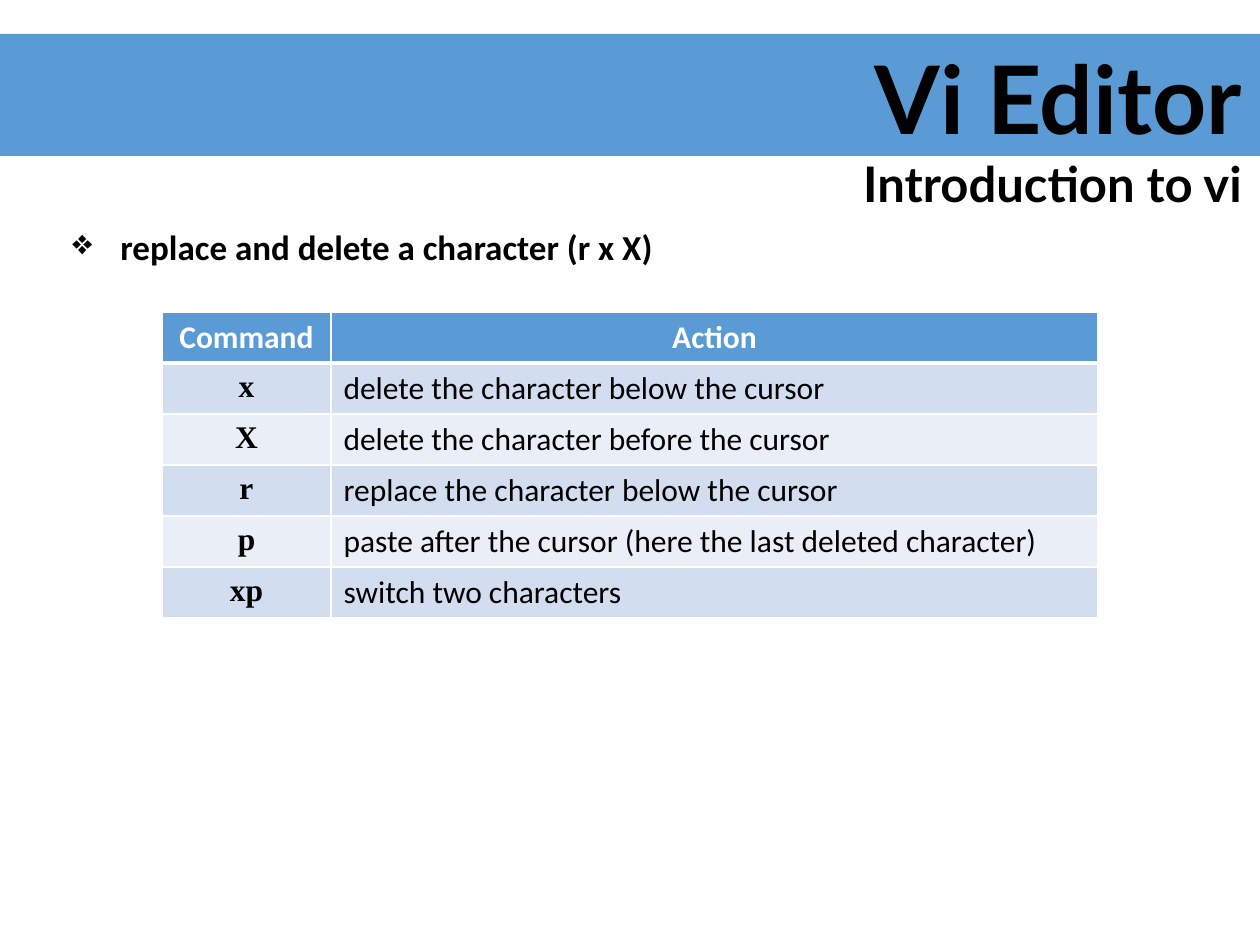
from lxml.etree import SubElement
from pptx import Presentation
from pptx.dml.color import RGBColor
from pptx.enum.shapes import MSO_SHAPE as Shape
from pptx.enum.text import MSO_AUTO_SIZE as AutoSize, PP_ALIGN as Align
from pptx.oxml.ns import qn
from pptx.util import Pt

PX = 914400 / 126
BLUE, PALE, PALER = "5B9BD5", "D2DEEF", "EAEFF7"
BLACK, WHITE = "000000", "FFFFFF"
HEADING = {"name": "Lato", "bold": True}
TOPIC = {"name": "Calibri", "bold": True, "size": Pt(20)}
HEADER = {"name": "Calibri", "bold": True, "size": Pt(18)}
COMMAND = {**HEADER, "name": "Times New Roman"}
ACTION = {**HEADER, "bold": False}
COMMANDS = [
    ("x", "delete the character below the cursor"),
    ("X", "delete the character before the cursor"),
    ("r", "replace the character below the cursor"),
    ("p", "paste after the cursor (here the last deleted character)"),
    ("xp", "switch two characters"),
]


def px(*lengths):
    return [round(length * PX) for length in lengths]


def paint(fill, color):
    fill.solid()
    fill.fore_color.rgb = RGBColor.from_string(color)


def write(paragraph, words, font, color=BLACK, align=Align.LEFT):
    paragraph.alignment = align
    run = paragraph.add_run()
    run.text = words
    for key, value in font.items():
        setattr(run.font, key, value)
    paint(run.font.fill, color)


def add_frame(slide, left, top, width, height):
    frame = slide.shapes.add_textbox(*px(left, top, width, height)).text_frame
    frame.word_wrap = True
    frame.auto_size = AutoSize.SHAPE_TO_FIT_TEXT
    return frame


def add_banner(slide, left, top, width, height):
    band = slide.shapes.add_shape(Shape.RECTANGLE, *px(left, top, width, height))
    band.shadow.inherit = False
    paint(band.fill, BLUE)
    band.line.fill.background()
    titles = add_frame(slide, left + 24, top, width - 30, height + 64)
    write(titles.paragraphs[0], "Vi Editor", {**HEADING, "size": Pt(54)}, align=Align.RIGHT)
    write(titles.add_paragraph(), "Introduction to vi", {**HEADING, "size": Pt(28)}, align=Align.RIGHT)


def add_topic(slide, left, top, width, height):
    topic = add_frame(slide, left, top, width, height).paragraphs[0]
    write(topic, "replace and delete a character (r x X)", TOPIC)
    indent, = px(48)
    properties = topic._p.get_or_add_pPr()
    properties.set("marL", str(indent))
    properties.set("indent", str(-indent))
    SubElement(properties, qn("a:buChar"), char="❖")


def add_borders(cell, bottom):
    properties = cell._tc.get_or_add_tcPr()
    for index, (side, weight) in enumerate([("L", 1), ("R", 1), ("T", 1), ("B", bottom)]):
        border = SubElement(properties, qn(f"a:ln{side}"), w=str(Pt(weight)))
        fill = SubElement(border, qn("a:solidFill"))
        SubElement(fill, qn("a:srgbClr"), val=WHITE)
        properties.insert(index, border)


def add_commands(slide, left, top, width, height):
    rows = [("Command", "Action"), *COMMANDS]
    table = slide.shapes.add_table(len(rows), 2, *px(left, top, width, height)).table
    for column, length in zip(table.columns, px(169, width - 169)):
        column.width = length
    for r, row in enumerate(rows):
        table.rows[r].height, = px(height / len(rows))
        fill = BLUE if r == 0 else PALE if r % 2 else PALER
        for c, words in enumerate(row):
            cell = table.cell(r, c)
            paint(cell.fill, fill)
            add_borders(cell, 3 if r == 0 else 1)
            font = HEADER if r == 0 else (COMMAND, ACTION)[c]
            align = Align.CENTER if r == 0 or c == 0 else Align.LEFT
            write(cell.text_frame.paragraphs[0], words, font, WHITE if r == 0 else BLACK, align)


def main():
    deck = Presentation()
    deck.slide_width, deck.slide_height = px(1260, 945)
    slide = deck.slides.add_slide(deck.slide_layouts[6])
    add_banner(slide, 0, 34, 1260, 122)
    add_topic(slide, 60, 219, 1177, 97)
    add_commands(slide, 162, 312, 936, 306)
    deck.save("out.pptx")


if __name__ == "__main__":
    main()
